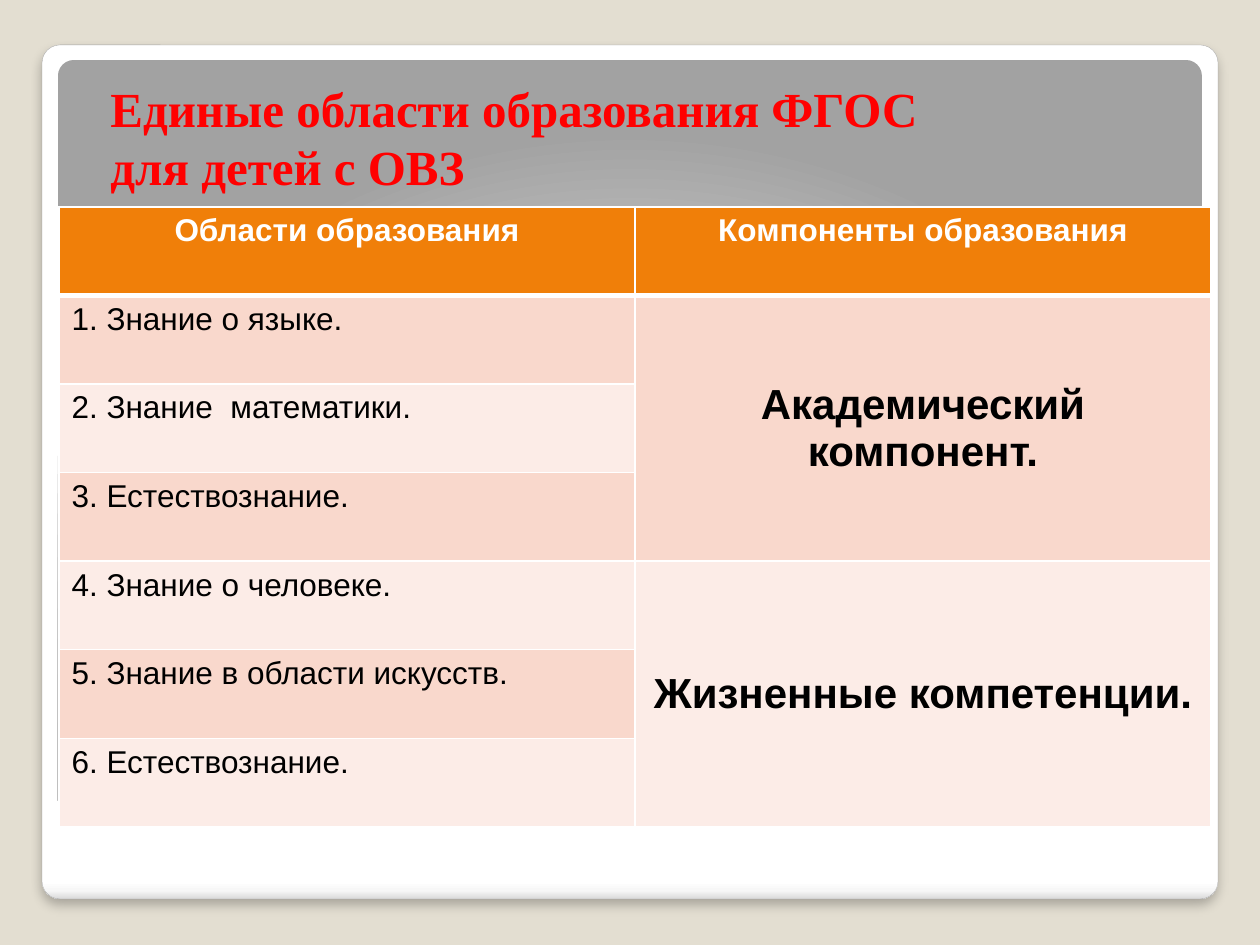
from lxml import etree
from pptx import Presentation
from pptx import util as u
from pptx.dml.color import RGBColor
from pptx.enum import shapes, text
from pptx.oxml import parse_xml
from pptx.oxml.ns import nsdecls, qn

SCALE = 914400 / 126
COLORS = {
    "background": "E3DED1", "white": "FFFFFF", "black": "000000",
    "frame_line": "A4A4A4", "title": "FF0000", "header": "F07F09",
    "band_dark": "F9D8CC", "band_light": "FCECE7",
}
FRAME_STOPS = [(0, "FFFFFF"), (98, "FFFFFF"), (99, "F7F7F7"), (100, "DADADA")]
PANEL_STOPS = [(0, "FFFFFF"), (55, "E1E1E1"), (100, "A2A2A2")]
LINEAR_DOWN = '<a:lin ang="5400000" scaled="0"/>'
RADIAL = ('<a:path path="circle">'
          '<a:fillToRect l="50000" t="175000" r="50000" b="-75000"/></a:path>')

TITLE = ["Единые области образования ФГОС", "для детей с ОВЗ"]
HEADERS = ["Области образования", "Компоненты образования"]
AREAS = [
    "1. Знание о языке.", "2. Знание  математики.", "3. Естествознание.",
    "4. Знание о человеке.", "5. Знание в области искусств.",
    "6. Естествознание.",
]
COMPONENTS = ["Академический компонент.", "Жизненные компетенции."]
AREAS_PER_COMPONENT = len(AREAS) // len(COMPONENTS)


def px(length):
    return u.Emu(round(length * SCALE))


def rgb(name):
    return RGBColor.from_string(COLORS[name])


def add_run(paragraph, wording, size, font, color, bold):
    run = paragraph.add_run()
    run.text = wording
    run.font.size = u.Pt(size)
    run.font.name = font
    run.font.bold = bold
    run.font.color.rgb = rgb(color)


def add_rounded_panel(slide, box, stops, direction):
    panel = slide.shapes.add_shape(
        shapes.MSO_SHAPE.ROUNDED_RECTANGLE, *map(px, box))
    panel.adjustments[0] = 0.021
    panel.shadow.inherit = False
    panel.line.fill.background()
    marks = "".join(
        f'<a:gs pos="{pos * 1000}"><a:srgbClr val="{color}"/></a:gs>'
        for pos, color in stops)
    gradient = parse_xml(
        f'<a:gradFill {nsdecls("a")} rotWithShape="1">'
        f'<a:gsLst>{marks}</a:gsLst>{direction}</a:gradFill>')
    panel.element.spPr.find(qn("a:prstGeom")).addnext(gradient)
    return panel


def add_frame(slide):
    frame = add_rounded_panel(slide, (42, 45, 1176, 854), FRAME_STOPS, LINEAR_DOWN)
    frame.line.color.rgb = rgb("frame_line")
    frame.line.width = u.Pt(0.16)
    frame.element.spPr.find(qn("a:effectLst")).append(parse_xml(
        f'<a:outerShdw {nsdecls("a")} blurRad="{u.Pt(6)}" dist="{u.Pt(4)}" '
        'dir="5400000" algn="t" rotWithShape="0"><a:srgbClr val="000000">'
        '<a:alpha val="25000"/></a:srgbClr></a:outerShdw>'))


def add_title(slide):
    frame = slide.shapes.add_textbox(*map(px, (98, 0, 1075, 202))).text_frame
    frame.word_wrap = True
    frame.vertical_anchor = text.MSO_ANCHOR.BOTTOM
    paragraph = frame.paragraphs[0]
    for number, line in enumerate(TITLE):
        if number:
            paragraph.add_line_break()
        add_run(paragraph, line, 28, "Times New Roman", "title", True)


def set_borders(cell, top=1, bottom=1):
    properties = cell._tc.get_or_add_tcPr()
    for side, width in (("L", 1), ("R", 1), ("T", top), ("B", bottom)):
        border = etree.SubElement(
            properties, qn(f"a:ln{side}"), w=str(u.Pt(width)))
        fill = etree.SubElement(border, qn("a:solidFill"))
        etree.SubElement(fill, qn("a:srgbClr"), val=COLORS["white"])


def fill_cell(cell, color):
    cell.fill.solid()
    cell.fill.fore_color.rgb = rgb(color)


def write_cell(cell, wording, size=18, color="black", bold=False, centred=False):
    paragraph = cell.text_frame.paragraphs[0]
    if centred:
        paragraph.alignment = text.PP_ALIGN.CENTER
    add_run(paragraph, wording, size, "Arial", color, bold)


def add_areas_table(slide):
    row_count = len(AREAS) + 1
    table = slide.shapes.add_table(
        row_count, len(HEADERS), *map(px, (59, 207, 1152, 620))).table
    for row in range(row_count):
        for column in range(len(HEADERS)):
            set_borders(table.cell(row, column),
                        top=3 if row == 1 else 1, bottom=3 if row == 0 else 1)

    for column, header in enumerate(HEADERS):
        cell = table.cell(0, column)
        fill_cell(cell, "header")
        write_cell(cell, header, color="white", bold=True, centred=True)

    for row, area in enumerate(AREAS, 1):
        cell = table.cell(row, 0)
        fill_cell(cell, "band_dark" if row % 2 else "band_light")
        write_cell(cell, area)

    for number, component in enumerate(COMPONENTS):
        first = 1 + number * AREAS_PER_COMPONENT
        last = first + AREAS_PER_COMPONENT - 1
        for row in range(first, last + 1):
            fill_cell(table.cell(row, 1), "band_light" if number else "band_dark")
        cell = table.cell(first, 1)
        cell.merge(table.cell(last, 1))
        cell.vertical_anchor = text.MSO_ANCHOR.MIDDLE
        write_cell(cell, component, size=24, bold=True, centred=True)


def main():
    deck = Presentation()
    deck.slide_width, deck.slide_height = px(1260), px(945)
    slide = deck.slides.add_slide(deck.slide_layouts[6])
    slide.background.fill.solid()
    slide.background.fill.fore_color.rgb = rgb("background")
    add_frame(slide)
    add_rounded_panel(slide, (58, 60, 1144, 756), PANEL_STOPS, RADIAL)
    add_title(slide)
    add_areas_table(slide)
    deck.save("out.pptx")


if __name__ == "__main__":
    main()
